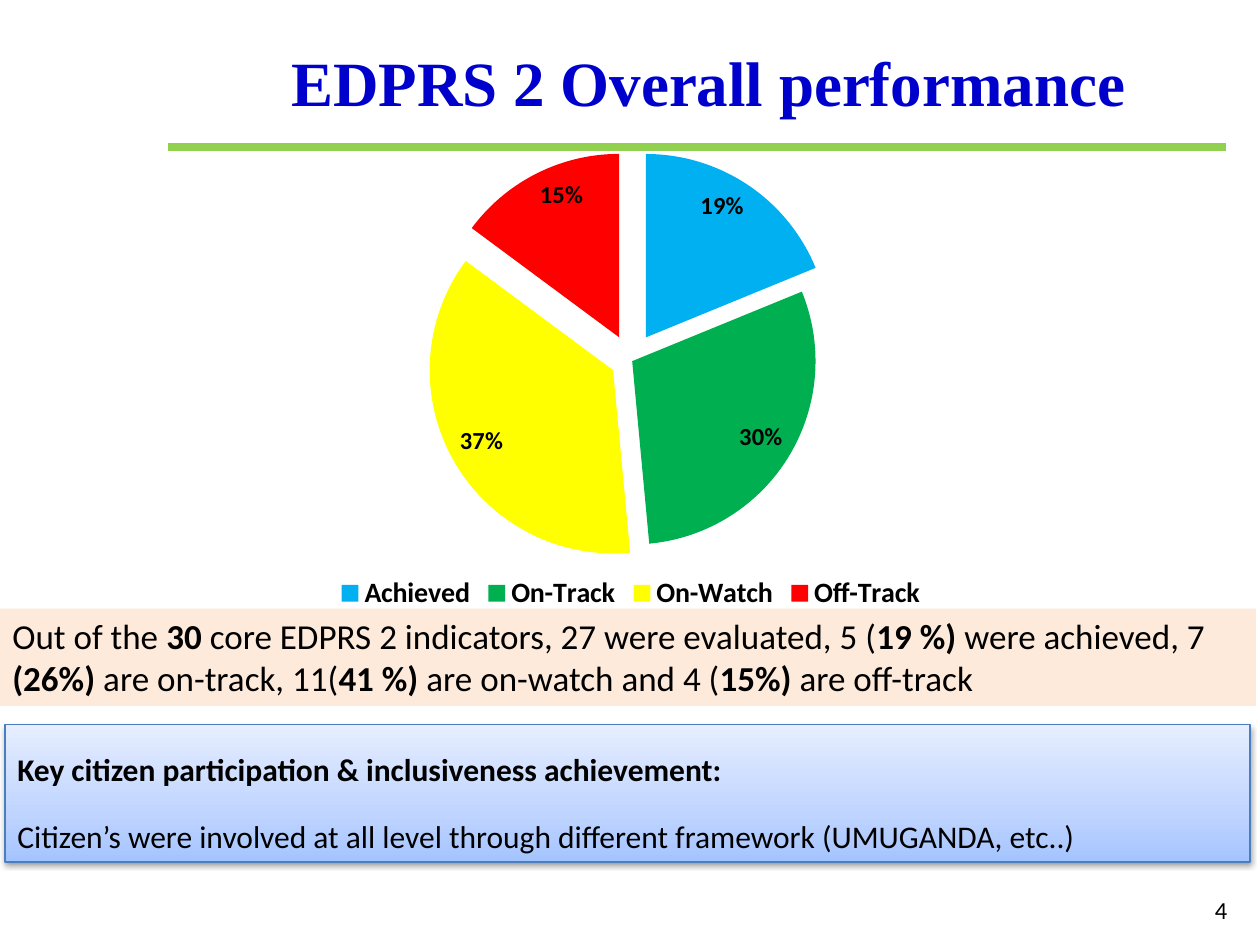
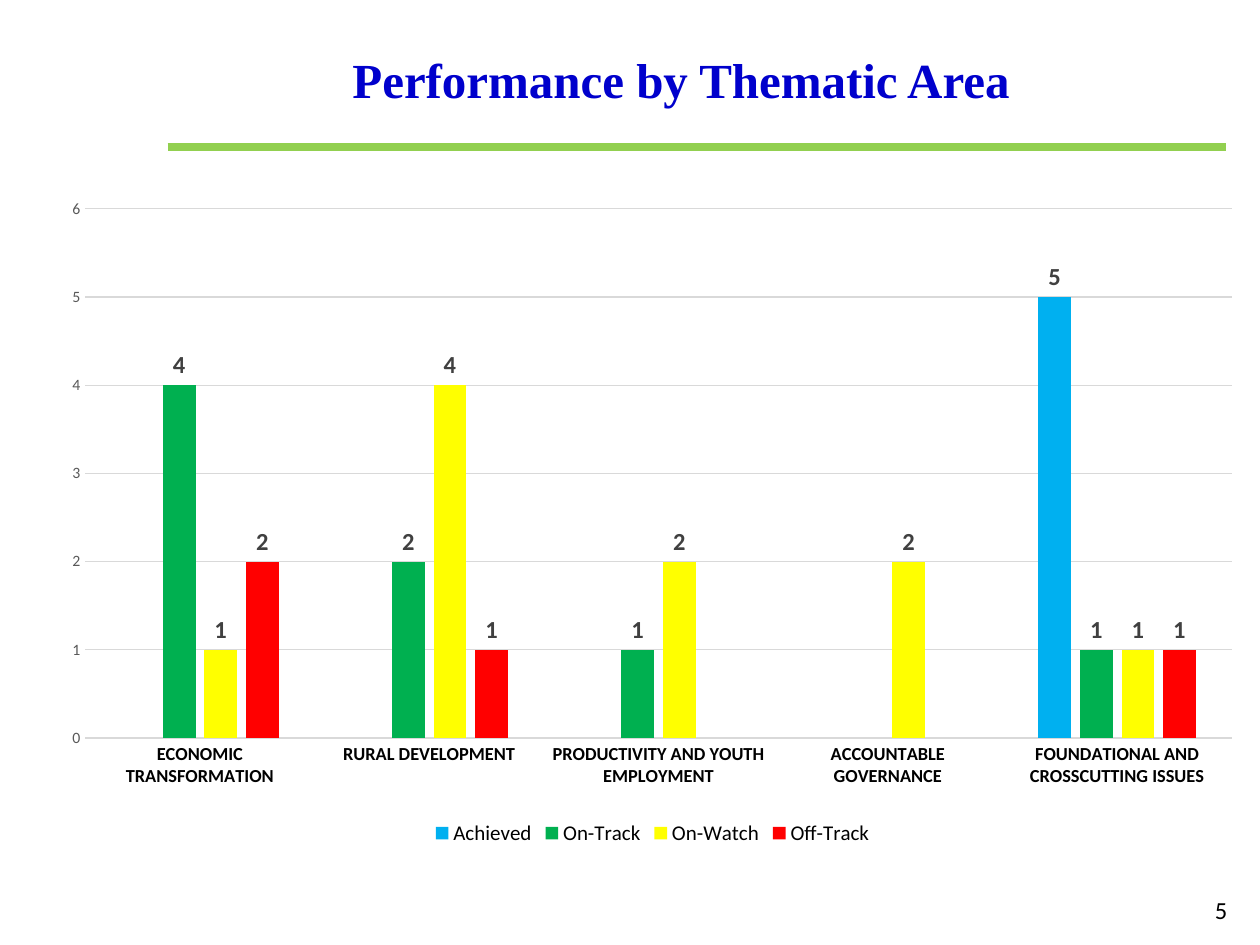
from copy import deepcopy
from typing import NamedTuple

from lxml import etree
from pptx import Presentation
from pptx.chart.data import CategoryChartData
from pptx.dml.color import RGBColor
from pptx.enum.chart import XL_CHART_TYPE, XL_LABEL_POSITION, XL_LEGEND_POSITION, XL_TICK_MARK
from pptx.enum.shapes import MSO_CONNECTOR, MSO_SHAPE
from pptx.enum.text import MSO_ANCHOR, MSO_AUTO_SIZE, PP_ALIGN
from pptx.oxml import parse_xml
from pptx.oxml.ns import nsdecls, qn
from pptx.util import Cm, Pt

PIE, COLUMN = XL_CHART_TYPE.PIE, XL_CHART_TYPE.COLUMN_CLUSTERED
INSIDE_END, OUTSIDE_END = XL_LABEL_POSITION.INSIDE_END, XL_LABEL_POSITION.OUTSIDE_END
LEGEND_BOTTOM = XL_LEGEND_POSITION.BOTTOM
NO_TICK = XL_TICK_MARK.NONE
STRAIGHT = MSO_CONNECTOR.STRAIGHT
RECTANGLE = MSO_SHAPE.RECTANGLE
TOP, MIDDLE = MSO_ANCHOR.TOP, MSO_ANCHOR.MIDDLE
CENTER, LEFT, RIGHT = PP_ALIGN.CENTER, PP_ALIGN.LEFT, PP_ALIGN.RIGHT
NO_AUTOFIT, GROW = MSO_AUTO_SIZE.NONE, MSO_AUTO_SIZE.SHAPE_TO_FIT_TEXT

BLACK = RGBColor(0x00, 0x00, 0x00)
TITLE_BLUE = RGBColor(0x00, 0x00, 0xCC)
RULE_GREEN = RGBColor(0x92, 0xD0, 0x50)
PEACH = RGBColor(0xFD, 0xEA, 0xDA)
BOX_OUTLINE = RGBColor(0x4B, 0x7E, 0xBC)
GRID_GREY = RGBColor(0xD9, 0xD9, 0xD9)
AXIS_GREY = RGBColor(0x59, 0x59, 0x59)
LABEL_GREY = RGBColor(0x40, 0x40, 0x40)

BODY_FONT, TITLE_FONT = "Calibri", "Times New Roman"


class Box(NamedTuple):
    left: float
    top: float
    width: float
    height: float

    def lengths(self) -> list[Cm]:
        return [Cm(value) for value in self]


class Rating(NamedTuple):
    name: str
    color: RGBColor
    share: float
    explosion: int
    by_area: tuple


class Stop(NamedTuple):
    position: float
    color: RGBColor


RATINGS = [
    Rating("Achieved", RGBColor(0x00, 0xB0, 0xF0), 0.19, 15, (None, None, None, None, 5)),
    Rating("On-Track", RGBColor(0x00, 0xB0, 0x50), 0.30, 1, (4, 2, 1, None, 1)),
    Rating("On-Watch", RGBColor(0xFF, 0xFF, 0x00), 0.37, 11, (1, 4, 2, 2, 1)),
    Rating("Off-Track", RGBColor(0xFF, 0x00, 0x00), 0.15, 14, (2, 1, None, None, 1)),
]
AREAS = [
    "ECONOMIC TRANSFORMATION",
    "RURAL DEVELOPMENT",
    "PRODUCTIVITY AND YOUTH EMPLOYMENT",
    "ACCOUNTABLE GOVERNANCE",
    "FOUNDATIONAL AND CROSSCUTTING ISSUES",
]
# Plain and bold wording take turns, plain first.
FINDINGS = [
    "Out of the ", "30 ", "core EDPRS 2 indicators, 27 were evaluated, 5 (", "19 %) ",
    "were achieved, 7 ", "(26%) ", "are on-track, 11(", "41 %)",
    " are on-watch and 4 (", "15%) ", "are off-track",
]
CITIZEN_HEADING = "Key citizen participation & inclusiveness achievement:"
CITIZEN_DETAIL = (
    "Citizen’s were involved at all level through different framework (UMUGANDA, etc..)"
)
BLUE_STOPS = [
    Stop(0, RGBColor(0xA4, 0xC4, 0xFF)),
    Stop(0.35, RGBColor(0xBF, 0xD4, 0xFF)),
    Stop(1, RGBColor(0xE6, 0xEE, 0xFF)),
]


def set_format(target, **values) -> None:
    for name, value in values.items():
        setattr(target, name, value)


def set_font(font, size: float, color: RGBColor = BLACK, bold: bool = False,
             name: str = BODY_FONT) -> None:
    set_format(font, size=Pt(size), bold=bold, name=name)
    font.color.rgb = color


def add_run(paragraph, text: str, size: float, bold: bool = False) -> None:
    run = paragraph.add_run()
    run.text = text
    set_font(run.font, size, bold=bold)


def add_framed_slide(prs, number: int, title: str, size: float, title_box: Box):
    """Add a slide with the shared title style, green rule and page number."""
    slide = prs.slides.add_slide(prs.slide_layouts[5])
    heading = slide.shapes.title
    left, top, width, height = title_box.lengths()
    set_format(heading, left=left, top=top, width=width, height=height)
    heading.text_frame.text = title
    set_format(heading.text_frame, vertical_anchor=MIDDLE, auto_size=NO_AUTOFIT, word_wrap=True)
    paragraph = heading.text_frame.paragraphs[0]
    paragraph.alignment = CENTER
    set_font(paragraph.runs[0].font, size, TITLE_BLUE, True, TITLE_FONT)

    rule = slide.shapes.add_connector(STRAIGHT, Cm(3.38), Cm(2.97), Cm(24.71), Cm(2.97))
    set_format(rule.line, width=Pt(4.5))
    rule.line.color.rgb = RULE_GREEN
    etree.SubElement(rule._element.spPr, qn("a:effectLst"))

    page = slide.shapes.add_textbox(*Box(19.48, 17.83, 5.51, 1.02).lengths()).text_frame
    set_format(page, word_wrap=True, vertical_anchor=MIDDLE)
    page.paragraphs[0].alignment = RIGHT
    add_run(page.paragraphs[0], str(number), 14)
    return slide


def add_text_panel(slide, box: Box):
    panel = slide.shapes.add_shape(RECTANGLE, *box.lengths())
    panel.shadow.inherit = False
    set_format(panel.text_frame, word_wrap=True, vertical_anchor=TOP, auto_size=GROW)
    panel.text_frame.paragraphs[0].alignment = LEFT
    return panel


def add_findings(slide) -> None:
    panel = add_text_panel(slide, Box(0, 12.27, 25.32, 1.96))
    panel.fill.solid()
    panel.fill.fore_color.rgb = PEACH
    panel.line.fill.background()
    for index, words in enumerate(FINDINGS):
        add_run(panel.text_frame.paragraphs[0], words, 20, bold=index % 2 == 1)


def add_citizen_panel(slide) -> None:
    panel = add_text_panel(slide, Box(0.1, 14.61, 25.1, 2.77))
    panel.line.width = Pt(0.75)
    panel.line.color.rgb = BOX_OUTLINE
    panel.fill.gradient()
    panel.fill.gradient_angle = 90
    properties = panel._element.spPr
    first_stop = properties.find(qn("a:gradFill")).find(qn("a:gsLst"))[0]
    first_stop.addnext(deepcopy(first_stop))
    for stop, wanted in zip(panel.fill.gradient_stops, BLUE_STOPS):
        stop.position = wanted.position
        stop.color.rgb = wanted.color
    properties.find(qn("a:effectLst")).append(parse_xml(
        f'<a:outerShdw {nsdecls("a")} blurRad="40000" dist="20000" dir="5400000" '
        'rotWithShape="0"><a:srgbClr val="000000"><a:alpha val="38000"/></a:srgbClr>'
        '</a:outerShdw>'))

    heading = panel.text_frame.paragraphs[0]
    detail = panel.text_frame.add_paragraph()
    set_format(heading, line_spacing=1.5)
    set_format(detail, line_spacing=1.5, space_before=Pt(6), alignment=LEFT)
    add_run(heading, CITIZEN_HEADING, 18, bold=True)
    add_run(detail, CITIZEN_DETAIL, 18)


def place_plot(chart, x: float, y: float, w: float, h: float) -> None:
    """Fix the inner plot area as fractions of the chart."""
    plot_area = chart._chartSpace.chart.plotArea
    for old in plot_area.findall(qn("c:layout")):
        plot_area.remove(old)
    sizes = "".join(f'<c:{tag} val="{value}"/>'
                    for tag, value in zip("xywh", (x, y, w, h)))
    plot_area.insert(0, parse_xml(
        f'<c:layout {nsdecls("c")}><c:manualLayout><c:layoutTarget val="inner"/>'
        f'<c:xMode val="edge"/><c:yMode val="edge"/>{sizes}</c:manualLayout></c:layout>'))


def add_rating_chart(slide, kind, box: Box, data: CategoryChartData,
                     legend_size: float, legend_bold: bool):
    chart = slide.shapes.add_chart(kind, *box.lengths(), data).chart
    set_format(chart, has_title=False, has_legend=True)
    set_font(chart.font, 10)
    set_format(chart.legend, position=LEGEND_BOTTOM, include_in_layout=False)
    set_font(chart.legend.font, legend_size, bold=legend_bold)
    return chart


def show_values(labels, number_format: str, position, color: RGBColor) -> None:
    set_format(labels, show_value=True, number_format=number_format,
               number_format_is_linked=False, position=position)
    set_font(labels.font, 14, color, True)


def paint(part, color: RGBColor) -> None:
    part.format.fill.solid()
    part.format.fill.fore_color.rgb = color


def add_overall_pie(slide) -> None:
    data = CategoryChartData(number_format="0%")
    data.categories = [rating.name for rating in RATINGS]
    data.add_series("Series 1", [rating.share for rating in RATINGS])
    chart = add_rating_chart(slide, PIE, Box(1.07, 2.69, 23.29, 9.73), data, 16, True)
    place_plot(chart, 0.34, 0.09, 0.32, 0.76)
    chart.plots[0].vary_by_categories = True
    series = chart.plots[0].series[0]
    show_values(series.data_labels, "0%", INSIDE_END, BLACK)
    series.data_labels.show_percentage = False
    for index, rating in enumerate(RATINGS):
        paint(series.points[index], rating.color)
    for point, rating in zip(series._element.findall(qn("c:dPt")), RATINGS):
        explosion = parse_xml(f'<c:explosion {nsdecls("c")} val="{rating.explosion}"/>')
        point.find(qn("c:spPr")).addprevious(explosion)


def add_area_columns(slide) -> None:
    data = CategoryChartData(number_format="0")
    data.categories = AREAS
    for rating in RATINGS:
        data.add_series(rating.name, rating.by_area)
    chart = add_rating_chart(slide, COLUMN, Box(0.99, 3.81, 24.33, 13.34), data, 12, False)
    place_plot(chart, 0.03, 0.03, 0.95, 0.8)
    set_format(chart.plots[0], gap_width=219, overlap=-27, vary_by_categories=False)
    for series, rating in zip(chart.plots[0].series, RATINGS):
        paint(series, rating.color)
        show_values(series.data_labels, "0", OUTSIDE_END, LABEL_GREY)

    areas, counts = chart.category_axis, chart.value_axis
    for axis in (areas, counts):
        set_format(axis, major_tick_mark=NO_TICK, minor_tick_mark=NO_TICK)
    set_font(areas.tick_labels.font, 10.5, bold=True)
    set_font(counts.tick_labels.font, 9, AXIS_GREY)
    set_format(counts, minimum_scale=0, maximum_scale=6, major_unit=1, has_major_gridlines=True)
    counts.format.line.fill.background()
    for line in (areas.format.line, counts.major_gridlines.format.line):
        line.width = Pt(0.75)
        line.color.rgb = GRID_GREY


def main() -> None:
    prs = Presentation()
    set_format(prs, slide_width=Cm(25.4), slide_height=Cm(19.05))

    overall = add_framed_slide(prs, 4, "EDPRS 2 Overall performance", 36,
                               Box(3.25, 0.64, 22.07, 1.98))
    add_findings(overall)
    add_overall_pie(overall)
    add_citizen_panel(overall)

    by_area = add_framed_slide(prs, 5, "Performance by Thematic Area", 28,
                               Box(3.33, 0.64, 20.8, 1.91))
    add_area_columns(by_area)

    prs.save("out.pptx")


if __name__ == "__main__":
    main()
